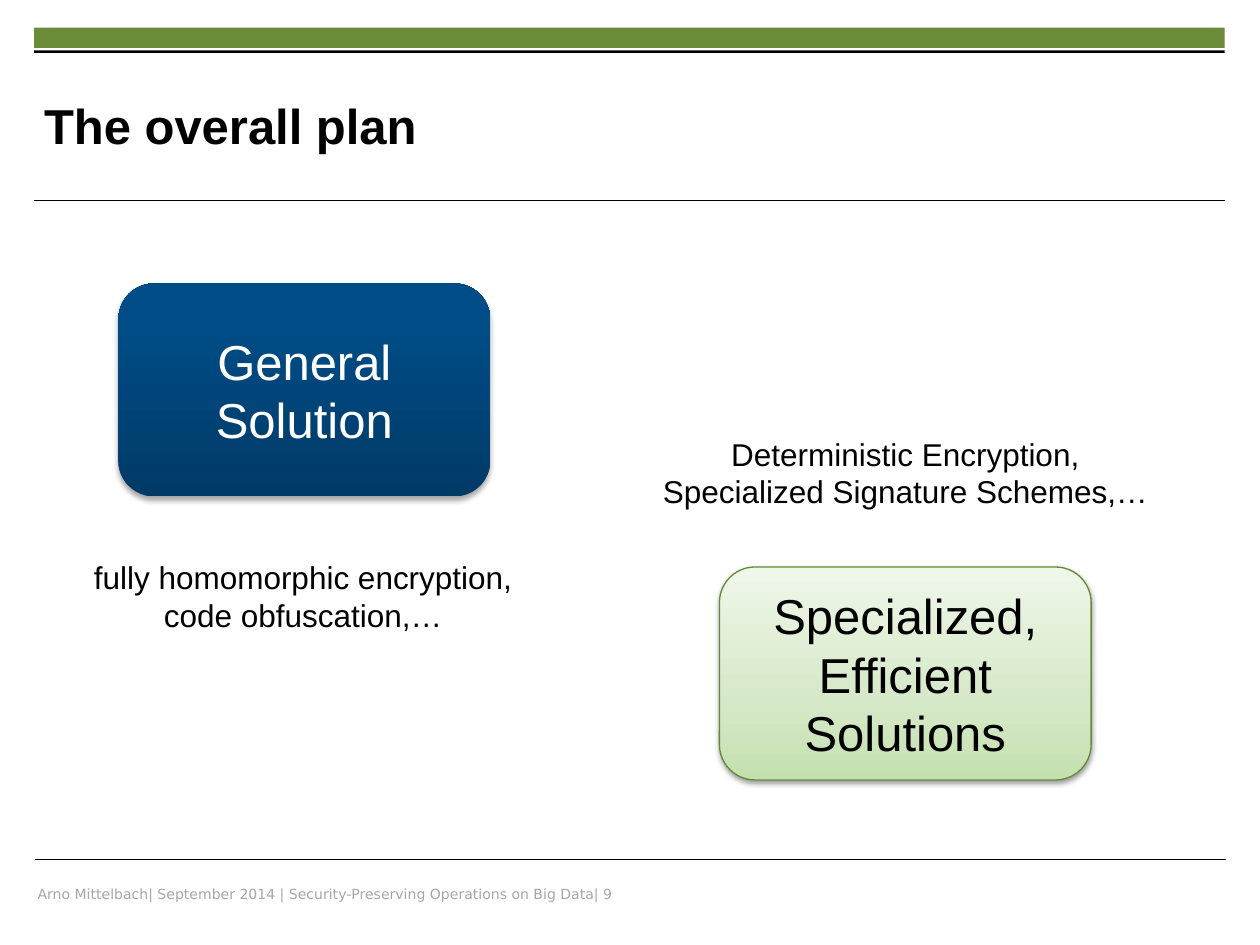
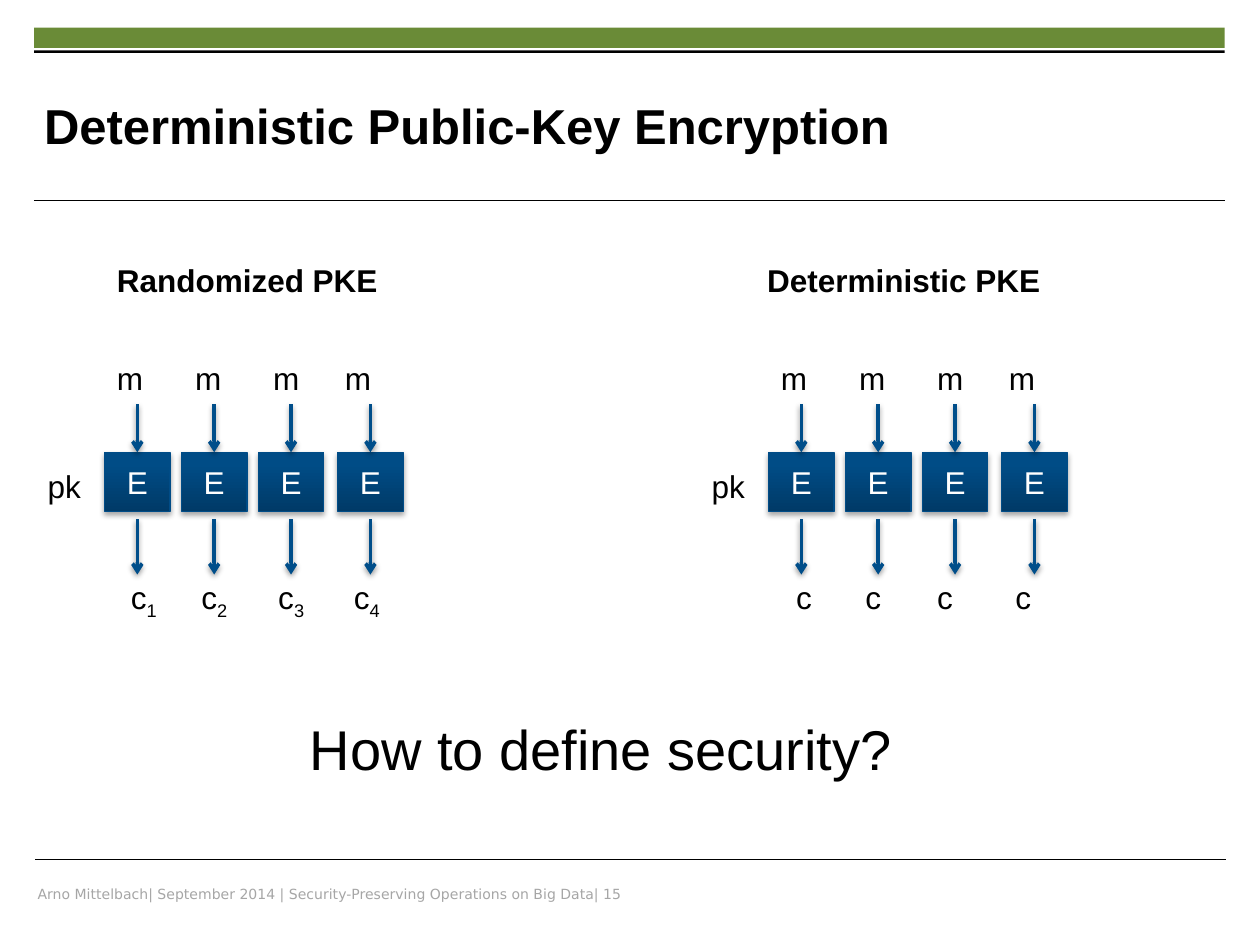
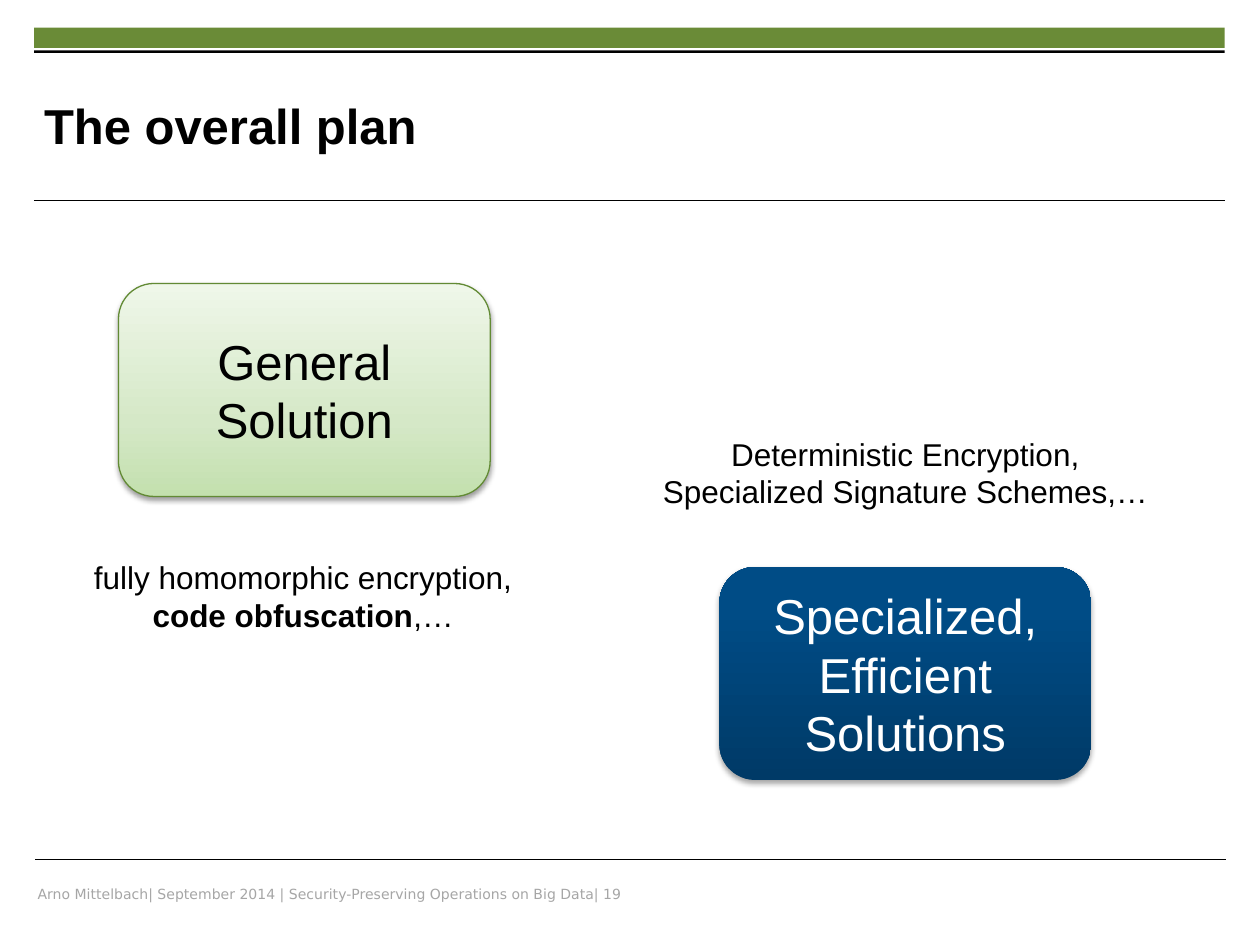
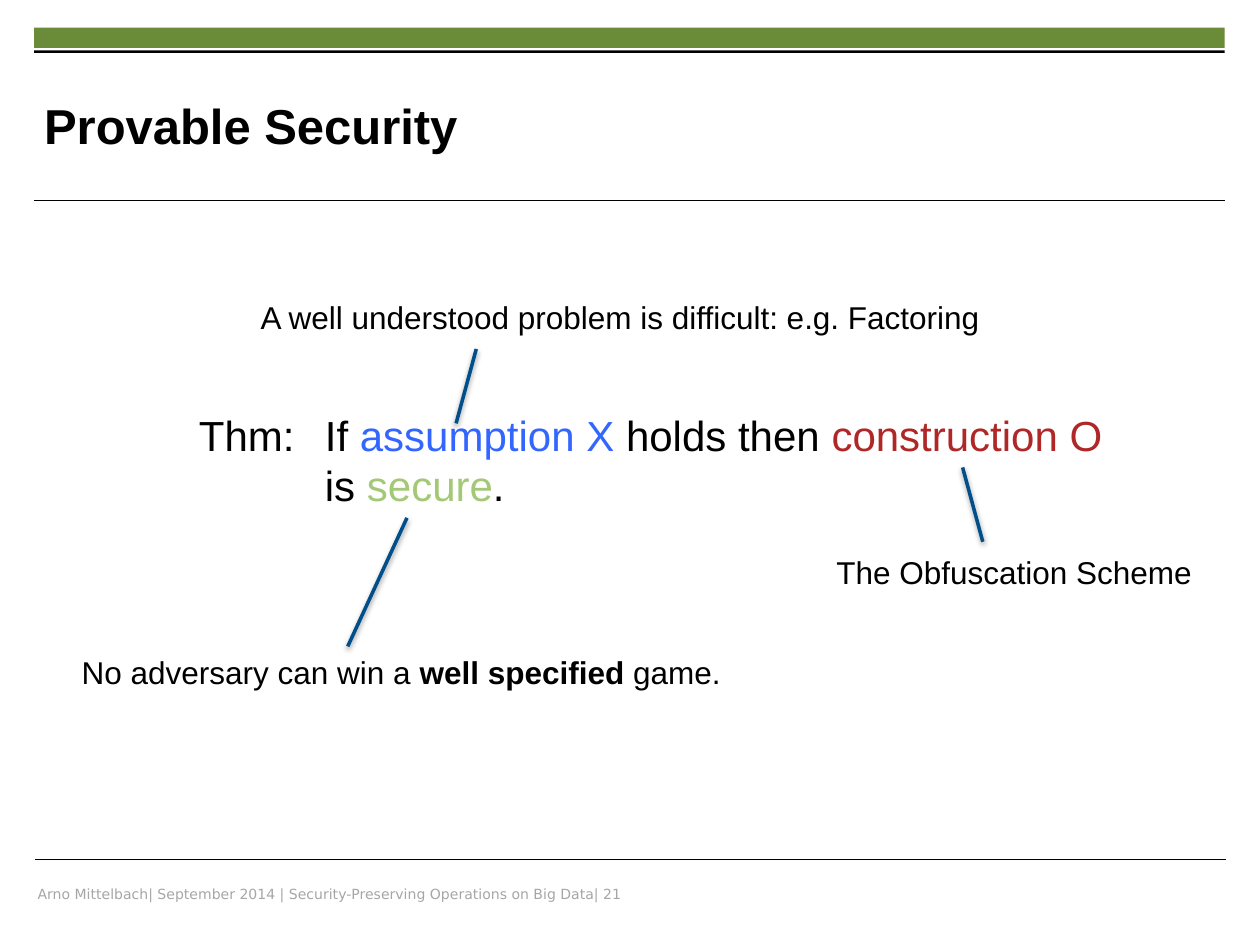
from lxml import etree
from pptx import Presentation
from pptx.dml.color import RGBColor
from pptx.enum.shapes import MSO_CONNECTOR, MSO_SHAPE
from pptx.enum.text import MSO_ANCHOR, MSO_AUTO_SIZE, PP_ALIGN
from pptx.oxml.ns import qn
from pptx.util import Emu, Pt

PX = 9144  # EMU per px, 100 px to the inch

RECT = MSO_SHAPE.RECTANGLE
ROUNDED = MSO_SHAPE.ROUNDED_RECTANGLE
STRAIGHT = MSO_CONNECTOR.STRAIGHT
LEFT, CENTER = PP_ALIGN.LEFT, PP_ALIGN.CENTER
MIDDLE = MSO_ANCHOR.MIDDLE
GROW = MSO_AUTO_SIZE.SHAPE_TO_FIT_TEXT
TOP_SIDE = 0
TITLE_ONLY = 5

BLACK = RGBColor(0x00, 0x00, 0x00)
WHITE = RGBColor(0xFF, 0xFF, 0xFF)
FOOTER_GRAY = RGBColor(0xA6, 0xA6, 0xA6)
BAND_GREEN = RGBColor(0x6A, 0x8B, 0x37)
NAVY = RGBColor(0x00, 0x3A, 0x67)
BLUE = RGBColor(0x00, 0x4C, 0x86)
BOX_LINE = RGBColor(0x00, 0x4C, 0x87)
LINK_BLUE = RGBColor(0x00, 0x4E, 0x8A)
GREEN_LINE = RGBColor(0x62, 0x8A, 0x34)
GREEN_DEEP = RGBColor(0xC3, 0xE0, 0xAE)
GREEN_MID = RGBColor(0xD5, 0xE8, 0xC7)
GREEN_PALE = RGBColor(0xEF, 0xF7, 0xE9)
ASSUMPTION_BLUE = RGBColor(0x33, 0x66, 0xFF)
CONSTRUCTION_RED = RGBColor(0xAF, 0x27, 0x27)
SECURE_GREEN = RGBColor(0xA3, 0xC9, 0x77)

# Shadows: opacity in percent, distance in EMU
BLUE_SHADOW = (35, 23000)
LIGHT_SHADOW = (38, 20000)

# Box looks: gradient stops from bottom to top
BLUE_STOPS = [(0, NAVY), (80, BLUE), (100, BLUE)]
GREEN_STOPS = [(0, GREEN_DEEP), (35, GREEN_MID), (100, GREEN_PALE)]
BLUE_LOOK = dict(stops=BLUE_STOPS, shadow=BLUE_SHADOW, text_color=WHITE)
GREEN_LOOK = dict(stops=GREEN_STOPS, shadow=LIGHT_SHADOW,
                  text_color=BLACK, line=GREEN_LINE)

FONT = "Arial"
FOOTER_FONT = "DejaVu Sans"
FOOTER = "Arno Mittelbach| September 2014 | Security-Preserving Operations on Big Data| "


def px(*lengths):
    return [Emu(length * PX) for length in lengths]


# --- Text ---

def set_tabs(para, stops):
    properties = para._p.get_or_add_pPr()
    tab_list = etree.SubElement(properties, qn("a:tabLst"))
    for stop in stops:
        etree.SubElement(tab_list, qn("a:tab"), pos=str(stop * PX), algn="l")


def write_text(frame, paragraphs, size=18, color=BLACK, bold=False,
               font=FONT, align=LEFT, tabs=()):
    """Each paragraph is a string or a list of (text, overrides) spans."""
    for index, content in enumerate(paragraphs):
        para = frame.paragraphs[0] if index == 0 else frame.add_paragraph()
        para.alignment = align
        if tabs:
            set_tabs(para, tabs)
        spans = [(content, {})] if isinstance(content, str) else content
        for text, overrides in spans:
            span = para.add_run()
            span.text = text
            span.font.name = font
            span.font.size = Pt(size)
            span.font.bold = overrides.get("bold", bold)
            span.font.color.rgb = overrides.get("color", color)
            if overrides.get("subscript"):
                span._r.get_or_add_rPr().set("baseline", "-25000")


def add_text(page, at, paragraphs, wrap=False, **text_format):
    box = page.shapes.add_textbox(*px(*at))
    box.text_frame.word_wrap = wrap
    box.text_frame.auto_size = GROW
    write_text(box.text_frame, paragraphs, **text_format)


# --- Shapes and lines ---

def add_shadow(effects, shadow):
    opacity, distance = shadow
    outer = etree.SubElement(effects, qn("a:outerShdw"), blurRad="40000",
                             dist=str(distance), dir="5400000", rotWithShape="0")
    color = etree.SubElement(outer, qn("a:srgbClr"), val=str(BLACK))
    etree.SubElement(color, qn("a:alpha"), val=str(opacity * 1000))


def fill_gradient(shape, stops):
    shape.fill.gradient()
    shape.fill.gradient_angle = 90
    stop_list = shape._element.spPr.find(".//" + qn("a:gsLst"))
    for old_stop in list(stop_list):
        stop_list.remove(old_stop)
    for position, color in stops:
        stop = etree.SubElement(stop_list, qn("a:gs"), pos=str(position * 1000))
        etree.SubElement(stop, qn("a:srgbClr"), val=str(color))


def add_bar(page, at, color):
    bar = page.shapes.add_shape(RECT, *px(*at))
    bar.shadow.inherit = False
    bar.fill.solid()
    bar.fill.fore_color.rgb = color
    bar.line.fill.background()


def add_box(page, kind, at, paragraphs, stops, shadow, text_color, line=None, size=28):
    box = page.shapes.add_shape(kind, *px(*at))
    fill_gradient(box, stops)
    if line is None:
        box.line.fill.background()
    else:
        box.line.color.rgb = line
        box.line.width = Pt(0.75)
    box.shadow.inherit = False
    add_shadow(box._element.spPr.find(qn("a:effectLst")), shadow)
    box.text_frame.vertical_anchor = MIDDLE
    write_text(box.text_frame, paragraphs, size=size, color=text_color, align=CENTER)
    return box


def add_line(page, start, end, color=LINK_BLUE, width=2, shadow=LIGHT_SHADOW, arrow=False):
    line = page.shapes.add_connector(STRAIGHT, *px(*start, *end))
    line.line.color.rgb = color
    line.line.width = Pt(width)
    properties = line._element.spPr
    if arrow:
        etree.SubElement(properties.find(qn("a:ln")), qn("a:tailEnd"), type="arrow")
    effects = etree.SubElement(properties, qn("a:effectLst"))
    if shadow:
        add_shadow(effects, shadow)
    return line


# --- Parts that every slide shares ---

def add_page(deck, title, number):
    page = deck.slides.add_slide(deck.slide_layouts[TITLE_ONLY])
    add_bar(page, (27, 22, 945, 16), BAND_GREEN)
    add_bar(page, (27, 40, 945, 2), BLACK)
    for left, top in ((27, 159), (28, 682)):
        add_line(page, (left, top), (left + 945, top), BLACK, 0.6, shadow=None)
    add_text(page, (20, 698, 505, 24), [f"{FOOTER}{number}"],
             size=8, color=FOOTER_GRAY, font=FOOTER_FONT)

    heading = page.shapes.title
    heading.left, heading.top, heading.width, heading.height = px(35, 53, 729, 92)
    frame = heading.text_frame
    frame.margin_left = frame.margin_top = frame.margin_right = frame.margin_bottom = 0
    frame.vertical_anchor = MIDDLE
    write_text(frame, [title], size=28, bold=True)
    return page


# --- Slides ---

def add_plan(deck, number, general_look, specialized_look, stress_obfuscation):
    page = add_page(deck, "The overall plan", number)
    add_box(page, ROUNDED, (94, 225, 295, 169), ["General", "Solution"], **general_look)
    add_box(page, ROUNDED, (571, 450, 295, 169),
            ["Specialized, Efficient", "Solutions"], **specialized_look)
    obfuscation = "code obfuscation,…"
    if stress_obfuscation:
        obfuscation = [("code obfuscation", {"bold": True}), (",…", {})]
    add_text(page, (63, 438, 355, 71),
             ["fully homomorphic encryption,", obfuscation], align=CENTER)
    add_text(page, (514, 340, 409, 71),
             ["Deterministic Encryption,", "Specialized Signature Schemes,…"], align=CENTER)


def add_scheme(page, left, ciphertexts, ciphertext_left, ciphertext_tabs):
    """Four encryptions of m under pk, side by side."""
    add_text(page, (left, 280, 260, 40), ["m\tm\tm\tm"], wrap=True, tabs=(62, 124, 181))
    add_text(page, (left - 55, 366, 47, 40), ["pk"])
    for offset in (0, 61, 122, 185):
        box = add_box(page, RECT, (left + offset, 359, 52, 47), ["E"],
                      line=BOX_LINE, size=18, **BLUE_LOOK)
        center = left + offset + 26
        arrow = add_line(page, (center, 321), (center, 359), arrow=True)
        arrow.end_connect(box, TOP_SIDE)
        add_line(page, (center, 412), (center, 456), arrow=True)
    add_text(page, (ciphertext_left, 454, 260, 40), [ciphertexts],
             wrap=True, tabs=ciphertext_tabs)


def add_encryption(deck):
    page = add_page(deck, "Deterministic Public-Key Encryption", 15)
    add_text(page, (83, 202, 229, 40), ["Randomized PKE"], bold=True)
    add_text(page, (599, 202, 239, 40), ["Deterministic PKE"], bold=True)
    numbered = []
    for index in range(1, 5):
        numbered.append(("c" if index == 1 else "\tc", {}))
        numbered.append((str(index), {"subscript": True}))
    add_scheme(page, 83, numbered, 94, (56, 117, 177))
    add_scheme(page, 610, "c\tc\tc\tc", 622, (55, 112, 174))
    add_text(page, (236, 562, 487, 64), ["How to define security?"], size=32)


def add_provable_security(deck):
    page = add_page(deck, "Provable Security", 21)
    theorem = [
        [("Thm:\tIf ", {}), ("assumption X ", {"color": ASSUMPTION_BLUE}),
         ("holds then ", {}), ("construction O", {"color": CONSTRUCTION_RED})],
        [("\tis ", {}), ("secure", {"color": SECURE_GREEN}), (".", {})],
    ]
    add_text(page, (148, 320, 742, 91), theorem, wrap=True, size=24, tabs=(100,))

    # Explanations, each tied to its term
    add_line(page, (764, 371), (780, 430))
    add_text(page, (654, 434, 305, 40), ["The Obfuscation Scheme"])
    add_line(page, (378, 277), (362, 336))
    add_text(page, (197, 232, 598, 40),
             ["A well understood problem is difficult: e.g. Factoring"])
    add_line(page, (323, 411), (276, 513))
    add_text(page, (55, 513, 532, 40),
             [[("No adversary can win a ", {}), ("well specified ", {"bold": True}),
               ("game.", {})]])


def main():
    deck = Presentation()
    deck.slide_width, deck.slide_height = px(1000, 750)
    add_plan(deck, 9, BLUE_LOOK, GREEN_LOOK, stress_obfuscation=False)
    add_encryption(deck)
    add_plan(deck, 19, GREEN_LOOK, BLUE_LOOK, stress_obfuscation=True)
    add_provable_security(deck)
    deck.save("out.pptx")


if __name__ == "__main__":
    main()
